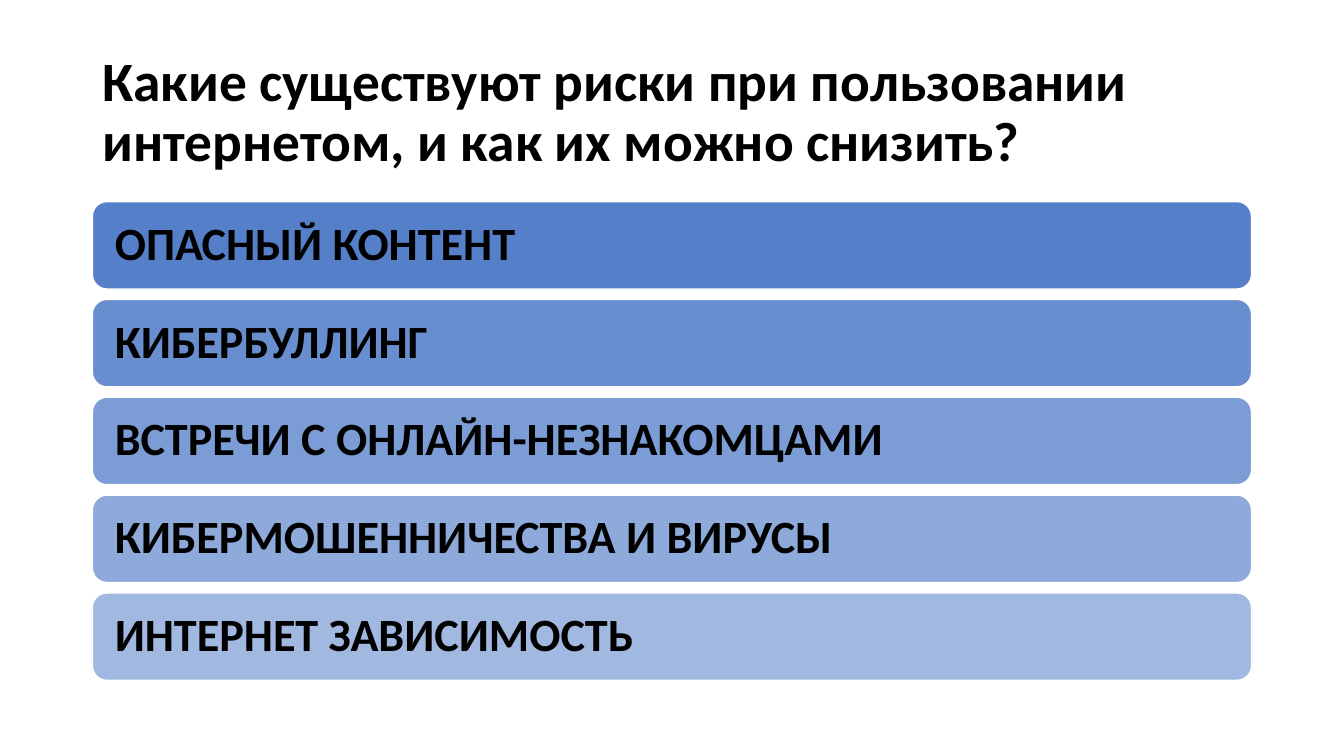
from lxml import etree
from pptx import Presentation
from pptx.dml.color import RGBColor
from pptx.enum.shapes import MSO_SHAPE as SHAPE
from pptx.enum.text import MSO_ANCHOR as ANCHOR, MSO_AUTO_SIZE as AUTO, PP_ALIGN as ALIGN
from pptx.oxml.ns import qn
from pptx.util import Pt

TITLE = "Какие существуют риски при пользовании интернетом, и как их можно снизить?"
RISKS = [
    "ОПАСНЫЙ КОНТЕНТ",
    "КИБЕРБУЛЛИНГ",
    "ВСТРЕЧИ С ОНЛАЙН-НЕЗНАКОМЦАМИ",
    "КИБЕРМОШЕННИЧЕСТВА И ВИРУСЫ",
    "ИНТЕРНЕТ ЗАВИСИМОСТЬ",
]
BLUE, BLACK, WHITE = "4472C4", "000000", "FFFFFF"


def color(hex_code):
    return RGBColor.from_string(hex_code)


def place(sp, x, y, w, h):
    sp.left, sp.top, sp.width, sp.height = Pt(x), Pt(y), Pt(w), Pt(h)


def write(sp, text, size):
    """Bold black text, left-aligned and centred vertically."""
    tf = sp.text_frame
    tf.text = text
    tf.word_wrap = True
    tf.auto_size = AUTO.NONE
    tf.vertical_anchor = ANCHOR.MIDDLE
    p = tf.paragraphs[0]
    p.alignment = ALIGN.LEFT
    p.line_spacing = 0.9
    font = p.runs[0].font
    font.name, font.size, font.bold = "Calibri", Pt(size), True
    font.color.rgb = color(BLACK)
    return tf


def set_opacity(sp, percent):
    clr = sp.fill._xPr.find(qn("a:solidFill"))[0]
    etree.SubElement(clr, qn("a:alpha")).set("val", str(percent * 1000))


def add_title(s, x, y, w, h):
    title = s.shapes.title
    place(title, x, y, w, h)
    write(title, TITLE, 39.6)


def add_risk_list(s, x, y, w, h, gap=7.4):
    """Equal bars that fade by ten percent at each step."""
    bar_h = (h - gap * (len(RISKS) - 1)) / len(RISKS)
    for i, risk in enumerate(RISKS):
        bar = s.shapes.add_shape(SHAPE.ROUNDED_RECTANGLE, Pt(x),
                                 Pt(y + i * (bar_h + gap)), Pt(w), Pt(bar_h))
        bar.shadow.inherit = False
        bar.fill.solid()
        bar.fill.fore_color.rgb = color(BLUE)
        set_opacity(bar, 90 - 10 * i)
        bar.line.color.rgb = color(WHITE)
        bar.line.width = Pt(1)
        tf = write(bar, risk, 33)
        tf.margin_left = tf.margin_right = Pt(13)


def main():
    prs = Presentation()
    prs.slide_width, prs.slide_height = Pt(960), Pt(540)
    s = prs.slides.add_slide(prs.slide_layouts[5])
    # Question
    add_title(s, 66, 28.8, 828, 104.4)
    # Risks
    add_risk_list(s, 66, 144, 828, 342)
    prs.save("out.pptx")


if __name__ == "__main__":
    main()
